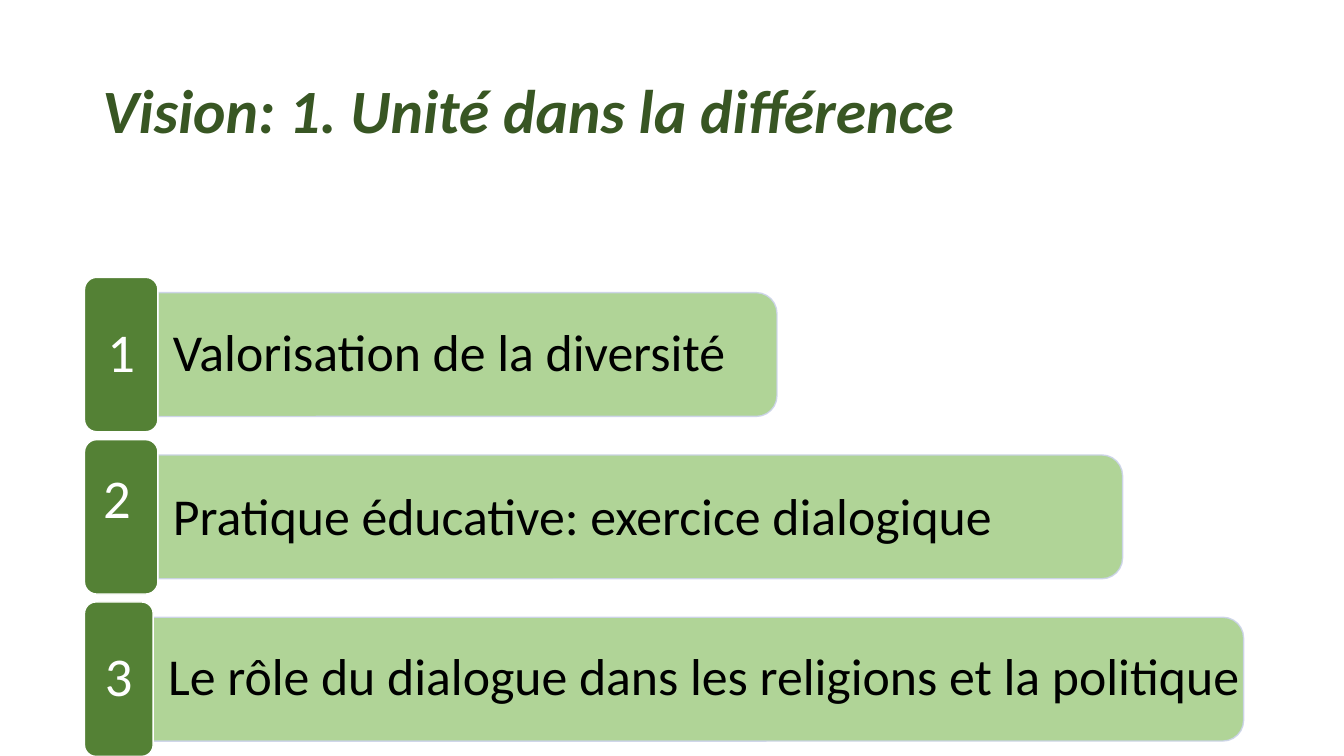
from pptx import Presentation
from pptx.dml.color import RGBColor
from pptx.enum.shapes import MSO_SHAPE as Kind
from pptx.enum.text import MSO_ANCHOR as Anchor, PP_ALIGN as Align
from pptx.oxml.ns import qn
from pptx.util import Cm, Pt
from lxml import etree

TITLE = "Vision: 1. Unité dans la différence"
# text, tab width, bar width, text width, text drop, number shift (x, y), in cm
ROWS = [
    ("Valorisation de la diversité", 1.85, 15.6, 15.44, 0, (0, 0)),
    ("Pratique éducative: exercice dialogique", 1.85, 24.31, 24.16, 0.05,
     (-0.11, -0.41)),
    ("Le rôle du dialogue dans les religions et la politique", 1.73, 27.48,
     28.88, 0, (0, 0)),
]
COLORS = {"title": "385623", "bar": "A8D08C", "edge": "CCD3EA",
          "tab": "548135", "white": "FFFFFF", "text": "000000"}
FONT = "Calibri"
LEFT, TOP, PITCH = 2.13, 6.99, 4.09
TAB_H, BAR_H, TEXT_H, NUM_H = 3.89, 3.12, 2.82, 3.7
ROUND = 0.167


def color(name):
    return RGBColor.from_string(COLORS[name])


def add_text(slide, text, box, size, hue, pad, align=Align.LEFT, strong=False):
    """Add a one-line text box; box and pad (side, top) are in cm."""
    frame = slide.shapes.add_textbox(*map(Cm, box)).text_frame
    frame.word_wrap = True
    frame.vertical_anchor = Anchor.MIDDLE
    frame.margin_left = frame.margin_right = Cm(pad[0])
    frame.margin_top = frame.margin_bottom = Cm(pad[1])
    frame.text = text
    para = frame.paragraphs[0]
    para.alignment = align
    para.line_spacing = 0.9
    font = para.runs[0].font
    font.name, font.size = FONT, Pt(size)
    font.bold = font.italic = strong
    font.color.rgb = color(hue)


def add_block(slide, kind, box, fill, edge):
    block = slide.shapes.add_shape(kind, *map(Cm, box))
    block.shadow.inherit = False
    block.adjustments[0] = ROUND
    block.fill.solid()
    block.fill.fore_color.rgb = color(fill)
    block.line.color.rgb = color(edge)
    block.line.width = Pt(1)
    return block


def add_bar(slide, x, mid, width):
    """Add a bar rounded on its right side, turned from an upright shape."""
    box = (x + (width - BAR_H) / 2, mid - width / 2, BAR_H, width)
    bar = add_block(slide, Kind.ROUND_2_SAME_RECTANGLE, box, "bar", "edge")
    bar.rotation = 90
    for tone in bar._element.spPr.iter(qn("a:srgbClr")):
        etree.SubElement(tone, qn("a:alpha")).set("val", "90000")


def add_row(slide, index, row):
    text, tab_w, bar_w, text_w, drop, (dx, dy) = row
    top = TOP + index * PITCH
    mid = top + TAB_H / 2
    x = LEFT + tab_w
    add_bar(slide, x, mid, bar_w)
    add_text(slide, text, (x, mid - TEXT_H / 2 + drop, text_w, TEXT_H),
             37, "text", (0.38, 0.2))
    add_block(slide, Kind.ROUNDED_RECTANGLE, (LEFT, top, tab_w, TAB_H),
              "tab", "white")
    add_text(slide, str(index + 1),
             (LEFT + dx, mid - NUM_H / 2 + dy, tab_w, NUM_H),
             39, "white", (0.41, 0.2), Align.CENTER)


def main():
    deck = Presentation()
    deck.slide_width, deck.slide_height = Cm(33.87), Cm(19.05)
    slide = deck.slides.add_slide(deck.slide_layouts[6])
    add_text(slide, TITLE, (2.33, 1.01, 29.21, 3.68), 44, "title",
             (0.25, 0.13), strong=True)
    for index, row in enumerate(ROWS):
        add_row(slide, index, row)
    deck.save("out.pptx")


if __name__ == "__main__":
    main()
